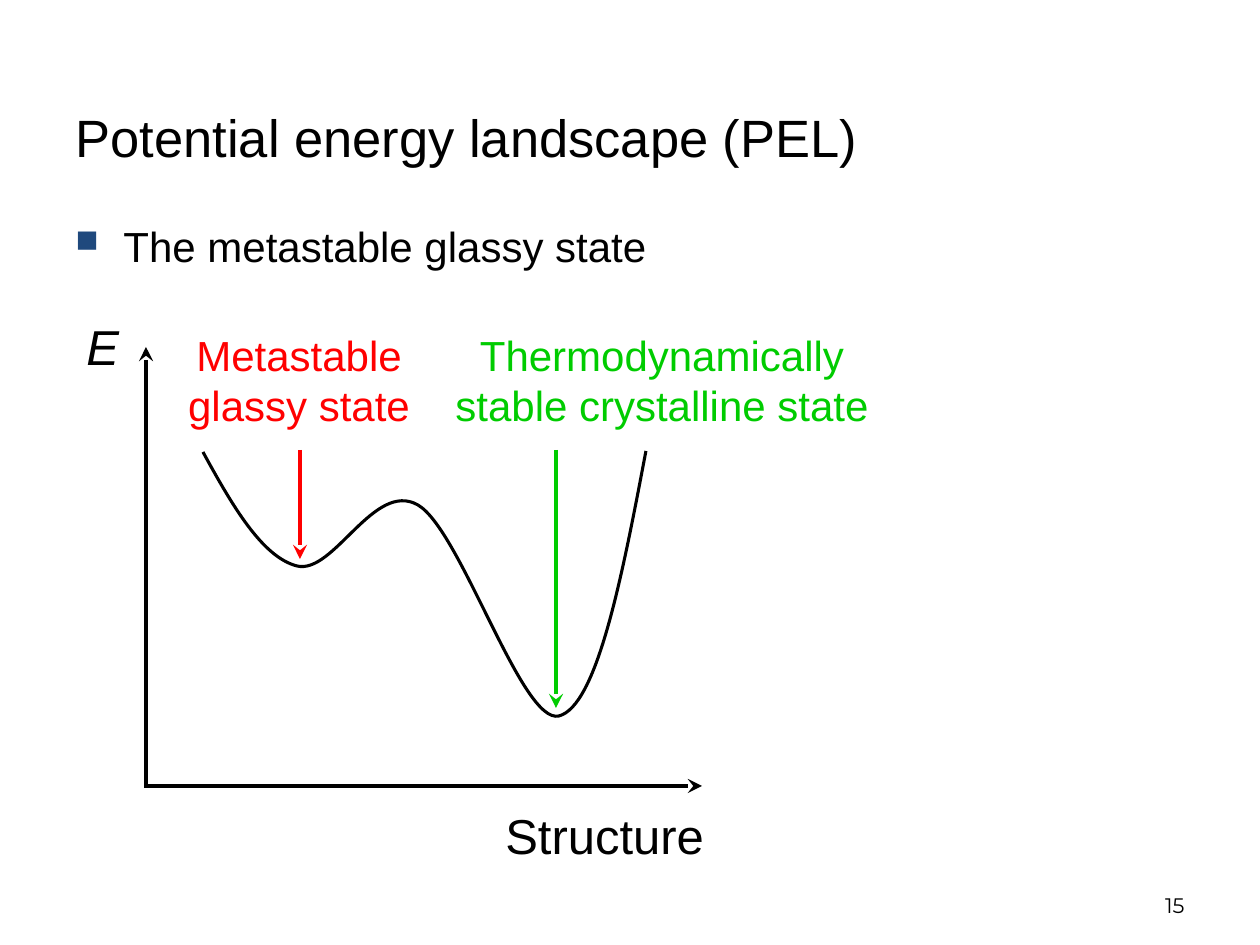
import dataclasses

import lxml.etree
import pptx
import pptx.dml.color
import pptx.enum.shapes
import pptx.enum.text
import pptx.oxml.ns
import pptx.util

SCALE = 914400 / 126
ALIGN = pptx.enum.text.PP_ALIGN
ANCHOR = pptx.enum.text.MSO_ANCHOR
qn = pptx.oxml.ns.qn


@dataclasses.dataclass(frozen=True)
class Theme:
    font: str = "Arial"
    number_font: str = "Montserrat"
    ink: str = "000000"
    glass: str = "FF0000"
    crystal: str = "00CC00"
    bullet: str = "1F497D"
    title: int = 30
    axis: int = 28
    body: int = 24
    number: int = 12
    arrow: float = 2.75
    curve: float = 1.75


THEME = Theme()


def emu(px):
    return pptx.util.Emu(round(px * SCALE))


def rgb(color):
    return pptx.dml.color.RGBColor.from_string(color)


def place(shape, box):
    shape.left, shape.top, shape.width, shape.height = map(emu, box)


def write(shape, text, size=THEME.body, color=THEME.ink, font=THEME.font,
          italic=False, align=ALIGN.LEFT, anchor=ANCHOR.TOP):
    frame = shape.text_frame
    frame.word_wrap = True
    frame.vertical_anchor = anchor
    para = frame.paragraphs[0]
    para.alignment = align
    run = para.add_run()
    run.text = text
    run.font.name = font
    run.font.size = pptx.util.Pt(size)
    run.font.italic = italic
    run.font.color.rgb = rgb(color)
    return para


def label(slide, box, text, **style):
    shape = slide.shapes.add_textbox(*map(emu, box))
    return write(shape, text, **style)


def arrow(slide, start, end, color=THEME.ink):
    kind = pptx.enum.shapes.MSO_CONNECTOR.STRAIGHT
    link = slide.shapes.add_connector(kind, *map(emu, start + end))
    link.line.color.rgb = rgb(color)
    link.line.width = pptx.util.Pt(THEME.arrow)
    lxml.etree.SubElement(link.line._get_or_add_ln(), qn("a:tailEnd"), type="stealth")
    lxml.etree.SubElement(link._element.spPr, qn("a:effectLst"))


def curve(slide, points):
    """Draw cubic curves through a start point and triples of two handles and an end."""
    build = slide.shapes.build_freeform(*points[0], scale=SCALE)
    build.add_line_segments(points[1:], close=False)
    shape = build.convert_to_shape()
    track = shape._element.xpath(".//a:path")[0]
    lines = track.findall(qn("a:lnTo"))
    for i in range(0, len(lines), 3):
        cubic = lxml.etree.SubElement(track, qn("a:cubicBezTo"))
        for line in lines[i:i + 3]:
            cubic.append(line[0])
            track.remove(line)
    # The frame spans the end points only, not the handles.
    ends = [y for _, y in points[::3]]
    height = max(ends) - min(ends)
    track.set("h", str(height))
    shape.height = emu(height)
    shape.shadow.inherit = False
    shape.fill.background()
    shape.line.color.rgb = rgb(THEME.ink)
    shape.line.width = pptx.util.Pt(THEME.curve)


def title(slide, box, text):
    shape = slide.shapes.title
    place(shape, box)
    write(shape, text, size=THEME.title, anchor=ANCHOR.MIDDLE)


def body(slide, box, text):
    para = label(slide, box, text)
    props = para._p.get_or_add_pPr()
    props.set("marL", str(emu(48)))
    props.set("indent", str(emu(-48)))
    tint = lxml.etree.SubElement(props, qn("a:buClr"))
    lxml.etree.SubElement(tint, qn("a:srgbClr"), val=THEME.bullet)
    lxml.etree.SubElement(props, qn("a:buSzPct"), val="75000")
    lxml.etree.SubElement(props, qn("a:buChar"), char="■")


def plot(slide, box):
    left, top = box[:2]

    def at(x, y, *size):
        return (left + x, top + y) + size

    arrow(slide, at(72, 478), at(72, 37))
    arrow(slide, at(71, 476), at(628, 476))
    curve(slide, [at(*point) for point in (
        (129, 142),
        (158, 195), (188, 247), (223, 256),
        (260, 265), (300, 170), (344, 195),
        (387, 220), (448, 415), (485, 406),
        (523, 396), (548, 268), (572, 141),
    )])
    label(slide, at(0, 0, 58, 72), "E", size=THEME.axis, italic=True)
    label(slide, at(419, 489, 241, 72), "Structure", size=THEME.axis)

    states = (
        ("Metastable glassy state", THEME.glass, 62, 326, 226, 249),
        ("Thermodynamically stable crystalline state", THEME.crystal, 368, 440, 482, 398),
    )
    for text, color, x, width, well, tip in states:
        arrow(slide, at(well, 140), at(well, tip), color)
        label(slide, at(x, 13, width, 115), text, color=color, align=ALIGN.CENTER)


def number(slide, box, text):
    label(slide, box, text, size=THEME.number, font=THEME.number_font,
          align=ALIGN.RIGHT, anchor=ANCHOR.BOTTOM)


def main():
    deck = pptx.Presentation()
    deck.slide_width, deck.slide_height = emu(1260), emu(945)
    slide = deck.slides.add_slide(deck.slide_layouts[5])
    title(slide, (63, 63, 1113, 147), "Potential energy landscape (PEL)")
    body(slide, (63, 214, 1113, 626), "The metastable glassy state")
    plot(slide, (74, 310, 808, 561))
    number(slide, (903, 861, 294, 63), "15")
    deck.save("out.pptx")


if __name__ == "__main__":
    main()
